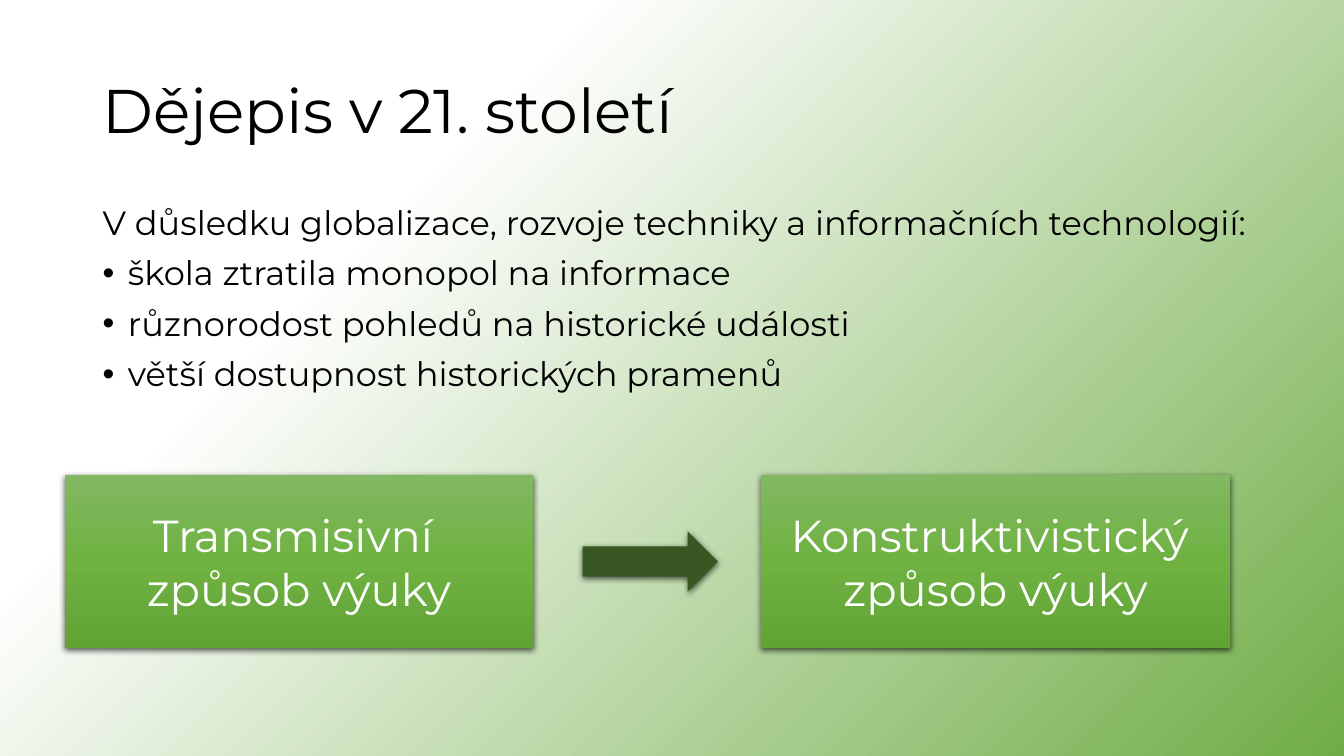
import pptx
import pptx.dml.color
import pptx.enum.shapes
import pptx.enum.text
import pptx.oxml
import pptx.oxml.ns
import pptx.util
from lxml import etree

Inches = pptx.util.Inches
Pt = pptx.util.Pt
qn = pptx.oxml.ns.qn
Align = pptx.enum.text.PP_ALIGN
Anchor = pptx.enum.text.MSO_ANCHOR
Preset = pptx.enum.shapes.MSO_SHAPE

BACKGROUND_STOPS = [(0, "FFFFFF"), (28, "FFFFFF"), (100, "70AD47")]
BOX_STOPS = [(0, "81B861"), (50, "6FB242"), (100, "62A336")]
SHADOW = (
    f'<a:effectLst {pptx.oxml.ns.nsdecls("a")}>'
    f'<a:outerShdw blurRad="{Pt(4.5)}" dist="{Pt(1.5)}" dir="5400000" rotWithShape="0">'
    '<a:srgbClr val="000000"><a:alpha val="63000"/></a:srgbClr>'
    '</a:outerShdw></a:effectLst>'
)


def color(hex_string):
    return pptx.dml.color.RGBColor.from_string(hex_string)


def set_gradient(fill, owner, stops, angle):
    """Fill with any number of (percent, colour) stops, angle clockwise."""
    fill.gradient()
    gradient = owner.find(".//" + qn("a:gradFill"))
    stop_list = gradient.find(qn("a:gsLst"))
    for stop in list(stop_list):
        stop_list.remove(stop)
    for percent, hex_string in stops:
        stop = etree.SubElement(stop_list, qn("a:gs"), pos=str(percent * 1000))
        etree.SubElement(stop, qn("a:srgbClr"), val=hex_string)
    gradient.find(qn("a:lin")).set("ang", str(angle * 60000))


def write_text(frame, lines, size, hex_string="000000", font="Montserrat",
               align=Align.LEFT, anchor=Anchor.TOP, line_spacing=1.0,
               space_before=0, bullets_from=None):
    frame.word_wrap = True
    frame.vertical_anchor = anchor
    for index, line in enumerate(lines):
        paragraph = frame.add_paragraph() if index else frame.paragraphs[0]
        paragraph.alignment = align
        paragraph.line_spacing = line_spacing
        paragraph.space_before = Pt(space_before)
        run = paragraph.add_run()
        run.text = line
        run.font.name = font
        run.font.size = Pt(size)
        run.font.color.rgb = color(hex_string)
        if bullets_from is not None and index >= bullets_from:
            properties = paragraph._p.get_or_add_pPr()
            properties.set("marL", str(Inches(0.25)))
            properties.set("indent", str(-Inches(0.25)))
            etree.SubElement(properties, qn("a:buFont"), typeface="Arial")
            etree.SubElement(properties, qn("a:buChar"), char="•")


class SlideBuilder:
    def __init__(self, presentation):
        self.slide = presentation.slides.add_slide(presentation.slide_layouts[6])

    def background(self, stops, angle):
        set_gradient(self.slide.background.fill, self.slide.element, stops, angle)

    def text(self, left, top, width, height, lines, **text_format):
        shape = self.slide.shapes.add_textbox(*map(Inches, (left, top, width, height)))
        write_text(shape.text_frame, lines, **text_format)

    def raised_shape(self, preset, left, top, width, height):
        shape = self.slide.shapes.add_shape(
            preset, *map(Inches, (left, top, width, height)))
        shape.line.fill.background()
        shape._element.spPr.append(pptx.oxml.parse_xml(SHADOW))
        return shape

    def box(self, left, top, width, height, lines):
        shape = self.raised_shape(Preset.RECTANGLE, left, top, width, height)
        set_gradient(shape.fill, shape._element.spPr, BOX_STOPS, 90)
        write_text(shape.text_frame, lines, size=32, hex_string="FFFFFF",
                   align=Align.CENTER, anchor=Anchor.MIDDLE)

    def arrow(self, left, top, width, height, hex_string):
        shape = self.raised_shape(Preset.RIGHT_ARROW, left, top, width, height)
        shape.fill.solid()
        shape.fill.fore_color.rgb = color(hex_string)


def main():
    presentation = pptx.Presentation()
    presentation.slide_width = Inches(13.33)
    presentation.slide_height = Inches(7.5)
    builder = SlideBuilder(presentation)
    builder.background(BACKGROUND_STOPS, 45)

    # Title and consequences
    builder.text(0.92, 0.4, 11.5, 1.45, ["Dějepis v 21. století"],
                 size=44, anchor=Anchor.MIDDLE, line_spacing=0.9)
    builder.text(0.92, 2, 11.68, 2.43, [
        "V důsledku globalizace, rozvoje techniky a informačních technologií:",
        "škola ztratila monopol na informace",
        "různorodost pohledů na historické události",
        "větší dostupnost historických pramenů",
    ], size=24, line_spacing=0.9, space_before=10, bullets_from=1)

    # Shift from one way of teaching to the other
    for left, approach in ((0.64, "Transmisivní "), (7.55, "Konstruktivistický ")):
        builder.box(left, 4.71, 4.65, 1.72, [approach, "způsob výuky"])
    builder.arrow(5.78, 5.27, 1.34, 0.6, "385723")

    presentation.save("out.pptx")


if __name__ == "__main__":
    main()
